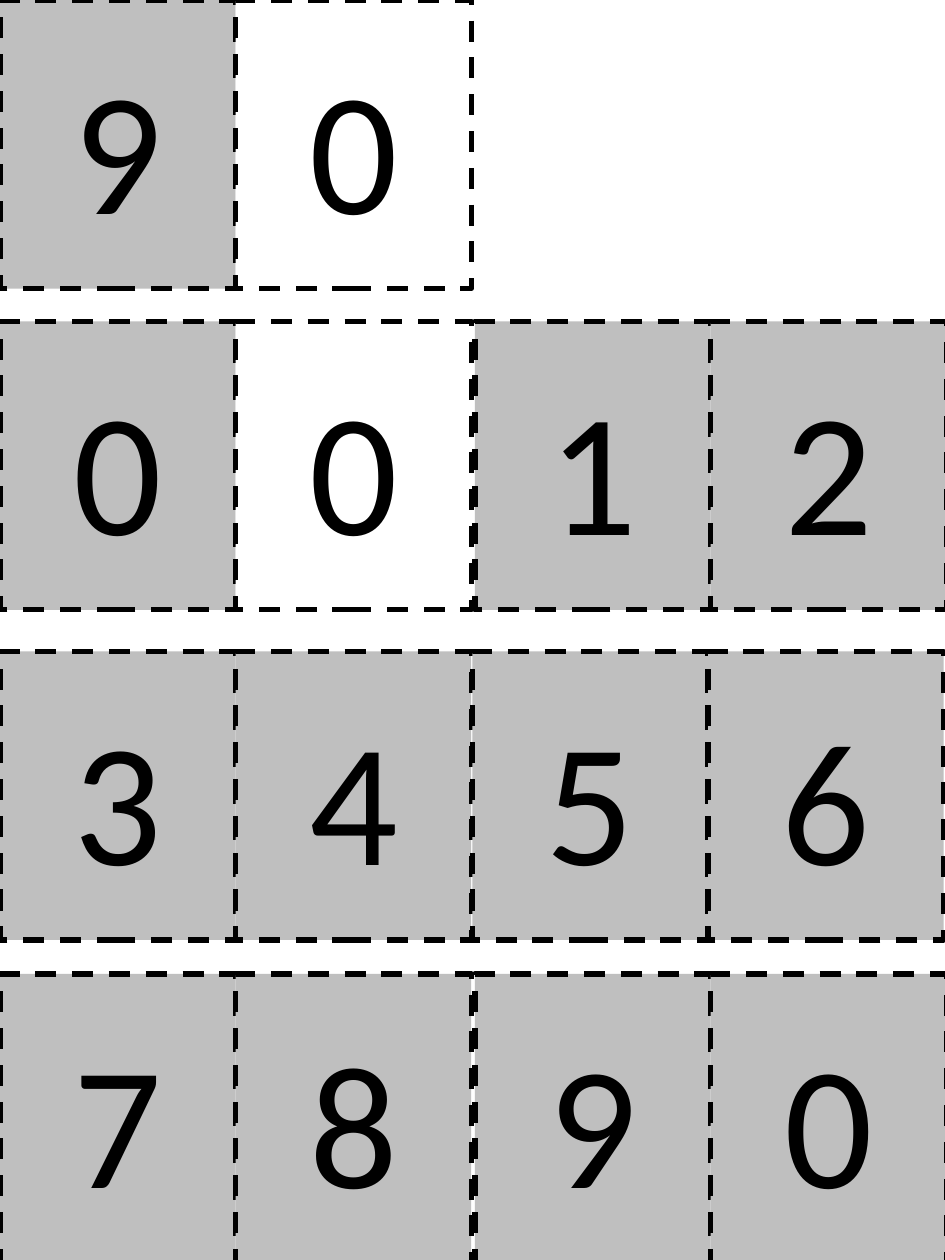
"""Build a sheet of dashed digit cards, 7.5 by 10 inches."""
from pptx import Presentation
from pptx.dml.color import RGBColor
from pptx.enum import dml, shapes, text
from pptx.util import Inches, Pt

COLORS = {"gray": "BFBFBF", "white": "FFFFFF", "ink": "000000"}
CARD_W, CARD_H = 1.87, 2.29
ROWS = [
    (0, 3.75, [("9", "gray"), ("0", "white")]),
    (2.55, 3.77, [("0", "gray"), ("0", "white"), ("1", "gray"), ("2", "gray")]),
    (5.17, 3.75, [(digit, "gray") for digit in "3456"]),
    (7.73, 3.77, [(digit, "gray") for digit in "7890"]),
]

prs = Presentation()
prs.slide_width, prs.slide_height = Inches(7.5), Inches(10)
s = prs.slides.add_slide(prs.slide_layouts[6])
ink = RGBColor.from_string(COLORS["ink"])

for top, right_pair, cards in ROWS:
    lefts = [pair + offset for pair in (0, right_pair) for offset in (0, CARD_W)]
    for left, (digit, color) in zip(lefts, cards):
        sp = s.shapes.add_shape(
            shapes.MSO_SHAPE.RECTANGLE,
            Inches(left), Inches(top), Inches(CARD_W), Inches(CARD_H),
        )
        sp.name = f"Card {digit}"
        sp.shadow.inherit = False
        sp.fill.solid()
        sp.fill.fore_color.rgb = RGBColor.from_string(COLORS[color])
        sp.line.color.rgb = ink
        sp.line.width = Pt(3)
        sp.line.dash_style = dml.MSO_LINE.DASH
        tf = sp.text_frame
        tf.word_wrap = True
        tf.vertical_anchor = text.MSO_ANCHOR.MIDDLE
        p = tf.paragraphs[0]
        p.alignment = text.PP_ALIGN.CENTER
        r = p.add_run()
        r.text = digit
        r.font.name = "Calibri"
        r.font.size = Pt(100)
        r.font.color.rgb = ink

prs.save("out.pptx")
